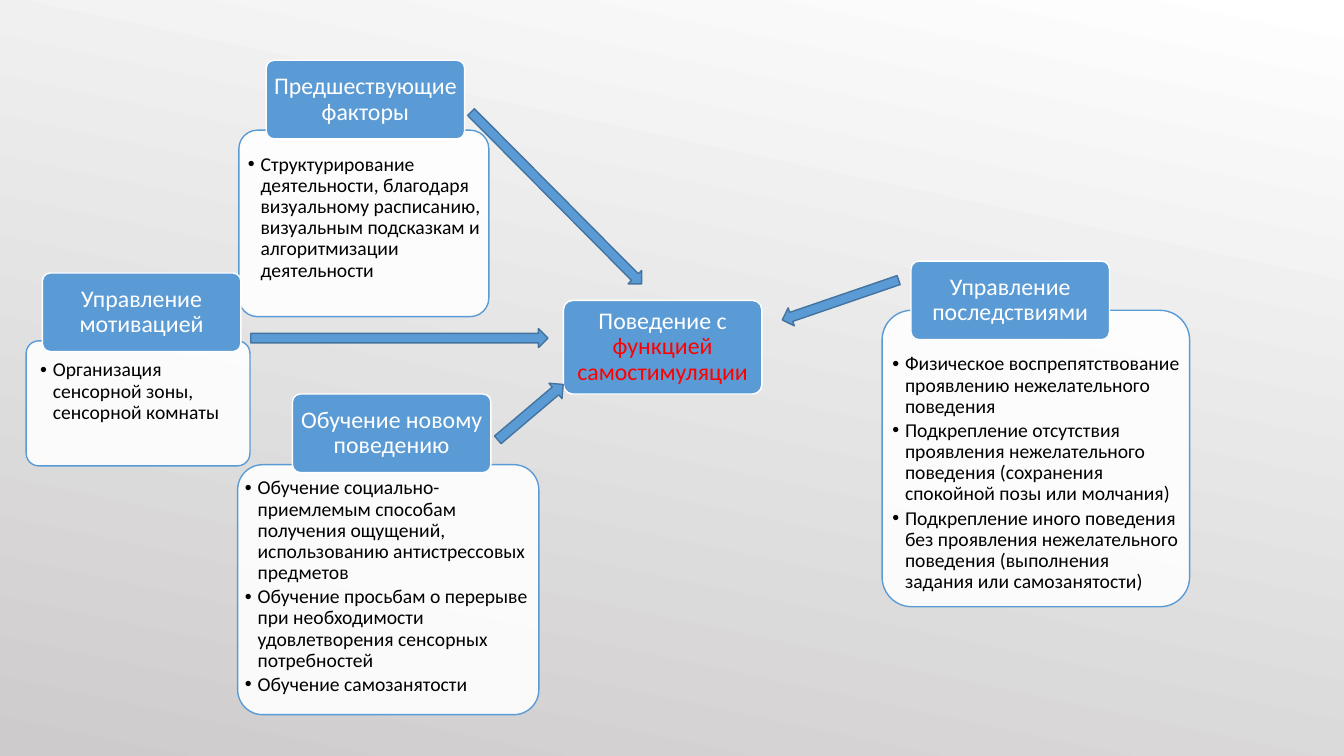
from lxml.etree import SubElement
from pptx import Presentation
from pptx.dml.color import RGBColor
from pptx.enum.shapes import MSO_SHAPE
from pptx.enum.text import MSO_ANCHOR, PP_ALIGN
from pptx.oxml.ns import qn
from pptx.util import Cm, Pt

COLORS = {
    "blue": "5B9BD5",
    "arrow_edge": "43739E",
    "white": "FFFFFF",
    "black": "000000",
    "red": "FF0000",
    "backdrop": "CDCBCB",
}
FONT = "Calibri"
HEADER_WIDTH, HEADER_HEIGHT = 5, 1.98

FACTORS = [
    {
        "title": "Управление последствиями",
        "header": (22.96, 6.58),
        "panel": (22.23, 7.82, 7.75, 7.47),
        "inset": (0.04, 0.88),
        "measures": [
            "Физическое воспрепятствование проявлению нежелательного поведения",
            "Подкрепление отсутствия проявления нежелательного поведения "
            "(сохранения спокойной позы или молчания)",
            "Подкрепление иного поведения без проявления нежелательного поведения "
            "(выполнения задания или самозанятости)",
        ],
    },
    {
        "title": "Обучение новому поведению",
        "header": (7.37, 9.93),
        "panel": (5.99, 11.71, 7.59, 6.3),
        "inset": (0, 0.15),
        "measures": [
            "Обучение социально-приемлемым способам получения ощущений, "
            "использованию антистрессовых предметов",
            "Обучение просьбам о перерыве при необходимости "
            "удовлетворения сенсорных потребностей",
            "Обучение самозанятости",
        ],
    },
    {
        "title": "Управление мотивацией",
        "header": (1.07, 6.88),
        "panel": (0.66, 8.59, 5.64, 3.15),
        "inset": (0.26, 0.39),
        "measures": ["Организация сенсорной зоны, сенсорной комнаты"],
    },
    {
        "title": "Предшествующие факторы",
        "header": (6.71, 1.52),
        "panel": (6.02, 3.28, 6.3, 4.7),
        "inset": (0.09, 0.47),
        "measures": [
            "Структурирование деятельности, благодаря визуальному расписанию, "
            "визуальным подсказкам и алгоритмизации деятельности"
        ],
    },
]

ARROWS = [
    (10.97, 4.75, 6.1, 0.48, 45.2),
    (6.32, 8.28, 7.49, 0.48, 0),
    (12.29, 10.13, 2.16, 0.51, 319.7),
    (19.63, 7.32, 3.1, 0.48, 161.1),
]


def rgb(name):
    return RGBColor.from_string(COLORS[name])


def paint_background(slide):
    fill = slide.background.fill
    fill.gradient()
    fill.gradient_angle = 258
    for stop, color, position in zip(fill.gradient_stops, ("white", "backdrop"), (0, 1)):
        stop.color.rgb = rgb(color)
        stop.position = position


def add_block(slide, kind, box, fill, edge):
    block = slide.shapes.add_shape(kind, *map(Cm, box))
    block.shadow.inherit = False
    block.fill.solid()
    block.fill.fore_color.rgb = rgb(fill)
    block.line.color.rgb = rgb(edge)
    block.line.width = Pt(1)
    return block


def add_card(slide, box, fill, edge, margins, anchor):
    card = add_block(slide, MSO_SHAPE.ROUNDED_RECTANGLE, box, fill, edge)
    card.adjustments[0] = 0.1
    frame = card.text_frame
    frame.word_wrap = True
    frame.vertical_anchor = anchor
    (frame.margin_left, frame.margin_top,
     frame.margin_right, frame.margin_bottom) = map(Cm, margins)
    return card


def add_run(paragraph, text, size, color):
    run = paragraph.add_run()
    run.text = text
    run.font.name = FONT
    run.font.size = Pt(size)
    run.font.color.rgb = rgb(color)


def add_bullet(paragraph):
    properties = paragraph._p.get_or_add_pPr()
    properties.set("marL", str(Cm(0.32)))
    properties.set("indent", str(-Cm(0.32)))
    SubElement(properties, qn("a:buFont"), typeface="Arial")
    SubElement(properties, qn("a:buChar"), char="•")


def add_panel(slide, box, inset, measures):
    panel = add_card(slide, box, "white", "blue", (*inset, 0, 0), MSO_ANCHOR.TOP)
    color = panel.fill._xPr.find(qn("a:solidFill"))[0]
    SubElement(color, qn("a:alpha"), val="90000")
    frame = panel.text_frame
    for index, measure in enumerate(measures):
        paragraph = frame.add_paragraph() if index else frame.paragraphs[0]
        add_bullet(paragraph)
        paragraph.alignment = PP_ALIGN.LEFT
        paragraph.line_spacing = 0.9
        paragraph.space_after = Pt(2.1)
        add_run(paragraph, measure, 14, "black")


def add_header(slide, box, parts):
    header = add_card(slide, box, "blue", "white", (0.1, 0.05, 0.1, 0.05), MSO_ANCHOR.MIDDLE)
    paragraph = header.text_frame.paragraphs[0]
    paragraph.alignment = PP_ALIGN.CENTER
    paragraph.line_spacing = 0.9
    for text, color in parts:
        add_run(paragraph, text, 17, color)


def add_arrow(slide, left, top, width, height, rotation):
    arrow = add_block(slide, MSO_SHAPE.RIGHT_ARROW, (left, top, width, height),
                      "blue", "arrow_edge")
    arrow.rotation = rotation


def main():
    deck = Presentation()
    deck.slide_width, deck.slide_height = Cm(33.87), Cm(19.05)
    slide = deck.slides.add_slide(deck.slide_layouts[6])
    paint_background(slide)
    for factor in FACTORS:
        add_panel(slide, factor["panel"], factor["inset"], factor["measures"])
    add_header(slide, (14.2, 7.57, HEADER_WIDTH, 2.36),
               [("Поведение с ", "white"), ("функцией самостимуляции", "red")])
    for factor in FACTORS:
        add_header(slide, (*factor["header"], HEADER_WIDTH, HEADER_HEIGHT),
                   [(factor["title"], "white")])
    for arrow in ARROWS:
        add_arrow(slide, *arrow)
    deck.save("out.pptx")


if __name__ == "__main__":
    main()
